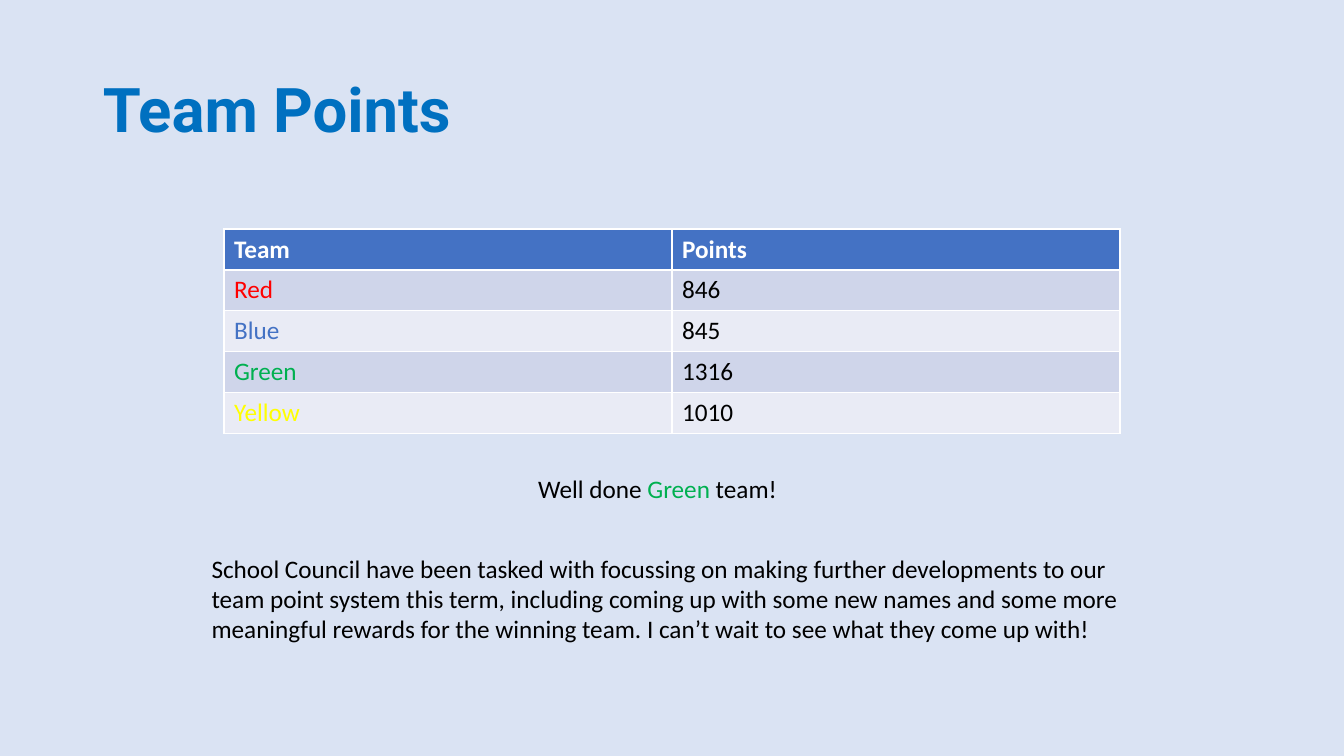
from pptx import Presentation
from pptx.dml.color import RGBColor
from pptx.enum.text import MSO_ANCHOR, PP_ALIGN
from pptx.util import Inches, Pt

WIDE, HIGH = 13.33, 7.5
BLACK, WHITE, BLUE, GREEN = "000000", "FFFFFF", "4472C4", "00B050"
BANDS = ("CFD5EA", "E9EBF5")
TEAMS = [
    ("Red", "846", "FF0000"),
    ("Blue", "845", BLUE),
    ("Green", "1316", GREEN),
    ("Yellow", "1010", "FFFF00"),
]
NEWS = (
    "School Council have been tasked with focussing on making further "
    "developments to our team point system this term, including coming up "
    "with some new names and some more meaningful rewards for the winning "
    "team. I can’t wait to see what they come up with!"
)


def paint(fill, color):
    fill.solid()
    fill.fore_color.rgb = RGBColor.from_string(color)


def style(run, color, size=18, face="Calibri", bold=False):
    font = run.font
    font.name, font.size, font.bold = face, Pt(size), bold
    paint(font.fill, color)


def box(left, top, width, height):
    """Turn shares of the slide's size into lengths."""
    return (Inches(left * WIDE), Inches(top * HIGH),
            Inches(width * WIDE), Inches(height * HIGH))


def add_title(slide, text):
    title = slide.shapes.title
    title.left, title.top, title.width, title.height = box(0.069, 0.053, 0.863, 0.193)
    frame = title.text_frame
    frame.text = text
    frame.vertical_anchor = MSO_ANCHOR.MIDDLE
    para = frame.paragraphs[0]
    para.alignment = PP_ALIGN.LEFT
    para.line_spacing = 0.9
    style(para.runs[0], "0070C0", 44, "Roboto", True)


def fill_cell(cell, text, color, back, bold=False):
    cell.text_frame.text = text
    style(cell.text_frame.paragraphs[0].runs[0], color, bold=bold)
    paint(cell.fill, back)


def add_scores(slide, area):
    table = slide.shapes.add_table(len(TEAMS) + 1, 2, *area).table
    for col, head in enumerate(("Team", "Points")):
        fill_cell(table.cell(0, col), head, WHITE, BLUE, True)
    for row, (team, points, color) in enumerate(TEAMS, 1):
        back = BANDS[(row - 1) % 2]
        fill_cell(table.cell(row, 0), team, color, back)
        fill_cell(table.cell(row, 1), points, BLACK, back)


def add_note(slide, area, *parts):
    """Add one paragraph made of (text, color) parts."""
    frame = slide.shapes.add_textbox(*area).text_frame
    frame.word_wrap = True
    for text, color in parts:
        run = frame.paragraphs[0].add_run()
        run.text = text
        style(run, color)


def main():
    deck = Presentation()
    deck.slide_width, deck.slide_height = Inches(WIDE), Inches(HIGH)
    slide = deck.slides.add_slide(deck.slide_layouts[5])
    paint(slide.background.fill, "DAE3F3")
    add_title(slide, "Team Points")
    add_scores(slide, box(1 / 6, 0.303, 2 / 3, 0.27))
    add_note(slide, box(0.393, 0.62, 0.2, 0.053),
             ("Well done ", BLACK), ("Green", GREEN), (" team!", BLACK))
    add_note(slide, box(0.15, 0.725, 0.724, 0.135), (NEWS, BLACK))
    deck.save("out.pptx")


if __name__ == "__main__":
    main()
